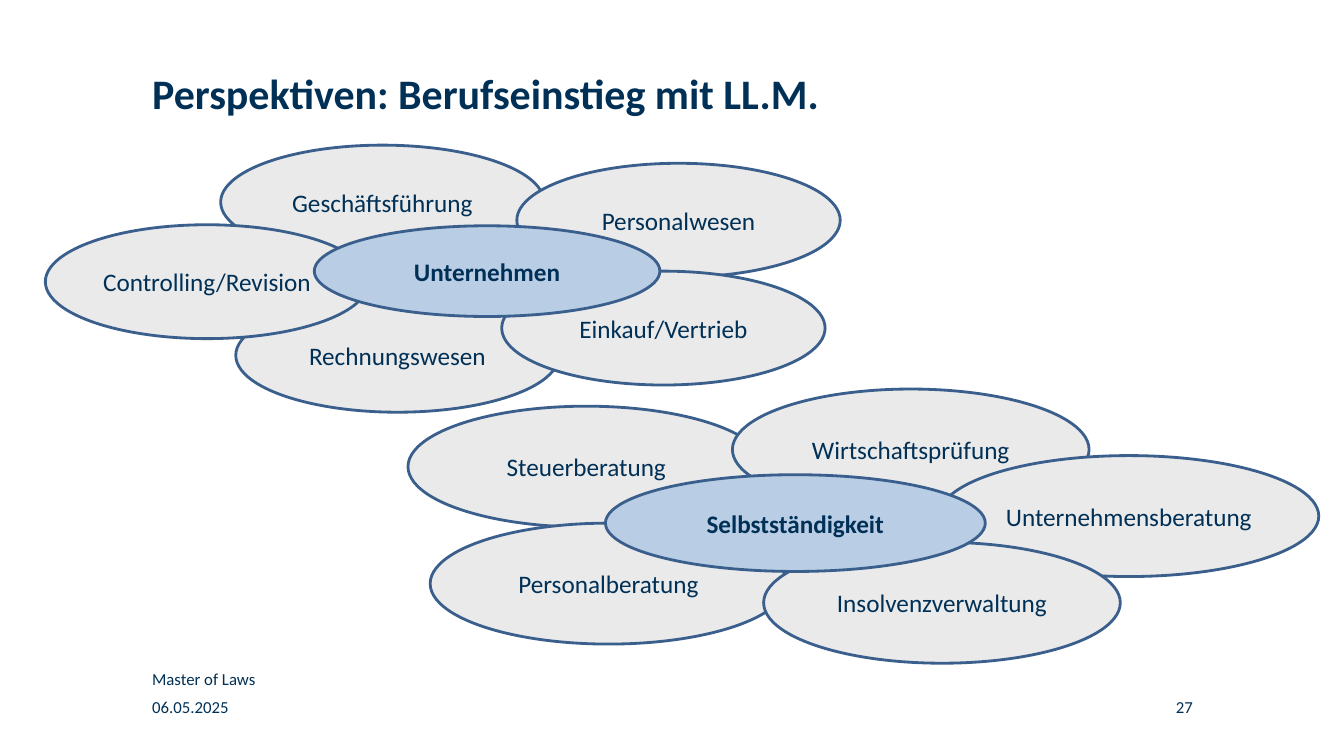
from dataclasses import dataclass

from pptx import Presentation
from pptx.dml.color import RGBColor
from pptx.enum.shapes import MSO_SHAPE
from pptx.enum.text import MSO_ANCHOR, PP_ALIGN
from pptx.shapes.group import GroupShape
from pptx.slide import Slide
from pptx.text.text import TextFrame
from pptx.util import Inches, Pt

COLORS = {"text": "003056", "field": "EAEAEA", "core": "B9CDE5", "line": "3A5F8C"}
NO_MARGINS = {f"margin_{side}": 0 for side in ("left", "top", "right", "bottom")}


@dataclass
class Label:
    text: str
    left: float
    top: float
    width: float
    height: float
    align: PP_ALIGN = PP_ALIGN.LEFT


@dataclass
class Oval:
    text: str
    left: float
    top: float
    width: float
    height: float
    core: bool = False


COMPANY_SIZE = (3.21, 1.13)
SELF_EMPLOYED_SIZE = (3.54, 1.2)

CLUSTERS = [
    [
        Oval("Geschäftsführung", 2.19, 1.44, *COMPANY_SIZE),
        Oval("Rechnungswesen", 2.34, 2.96, *COMPANY_SIZE),
        Oval("Controlling/Revision", 0.45, 2.23, *COMPANY_SIZE),
        Oval("Personalwesen", 5.13, 1.62, *COMPANY_SIZE),
        Oval("Einkauf/Vertrieb", 4.98, 2.69, *COMPANY_SIZE),
        Oval("Unternehmen", 3.12, 2.24, 3.43, 0.9, core=True),
    ],
    [
        Oval("Steuerberatung", 4.05, 4.03, *SELF_EMPLOYED_SIZE),
        Oval("Wirtschaftsprüfung", 7.27, 3.86, *SELF_EMPLOYED_SIZE),
        Oval("Unternehmensberatung", 9.32, 4.52, 3.77, 1.2),
        Oval("Personalberatung", 4.27, 5.19, *SELF_EMPLOYED_SIZE),
        Oval("Insolvenzverwaltung", 7.58, 5.38, *SELF_EMPLOYED_SIZE),
        Oval("Selbstständigkeit", 6.01, 4.71, 3.77, 0.96, core=True),
    ],
]

FOOTERS = [
    Label("06.05.2025", 1.51, 6.91, 3.11, 0.2),
    Label("Master of Laws", 1.51, 6.63, 6.18, 0.27),
    Label("27", 10.3, 6.91, 1.54, 0.2, PP_ALIGN.RIGHT),
]


def color(name: str) -> RGBColor:
    return RGBColor.from_string(COLORS[name])


def box(item: Label | Oval) -> list[int]:
    return [Inches(v) for v in (item.left, item.top, item.width, item.height)]


def write(tf: TextFrame, text: str, size: int, bold: bool = False,
          align: PP_ALIGN = PP_ALIGN.LEFT,
          anchor: MSO_ANCHOR = MSO_ANCHOR.TOP) -> None:
    frame = {**NO_MARGINS, "word_wrap": True, "vertical_anchor": anchor}
    for name, value in frame.items():
        setattr(tf, name, value)
    p = tf.paragraphs[0]
    p.alignment = align
    r = p.add_run()
    r.text = text
    for name, value in {"name": "Calibri", "size": Pt(size), "bold": bold}.items():
        setattr(r.font, name, value)
    r.font.color.rgb = color("text")


def add_title(s: Slide, label: Label) -> None:
    title = s.shapes.title
    title.left, title.top, title.width, title.height = box(label)
    write(title.text_frame, label.text, 30, bold=True)


def add_footer(s: Slide, label: Label) -> None:
    write(s.shapes.add_textbox(*box(label)).text_frame, label.text, 12, align=label.align)


def add_oval(group: GroupShape, oval: Oval) -> None:
    sp = group.shapes.add_shape(MSO_SHAPE.OVAL, *box(oval))
    sp.shadow.inherit = False
    sp.fill.solid()
    sp.fill.fore_color.rgb = color("core" if oval.core else "field")
    sp.line.color.rgb = color("line")
    sp.line.width = Pt(2)
    write(sp.text_frame, oval.text, 18, oval.core, PP_ALIGN.CENTER, MSO_ANCHOR.MIDDLE)


def main() -> None:
    prs = Presentation()
    prs.slide_width, prs.slide_height = Inches(13.34), Inches(7.5)
    s = prs.slides.add_slide(prs.slide_layouts[5])
    add_title(s, Label("Perspektiven: Berufseinstieg mit LL.M.", 1.51, 0.67, 7.06, 1.37))
    for label in FOOTERS:
        add_footer(s, label)
    for cluster in CLUSTERS:
        group = s.shapes.add_group_shape()
        for oval in cluster:
            add_oval(group, oval)
    prs.save("out.pptx")


if __name__ == "__main__":
    main()
